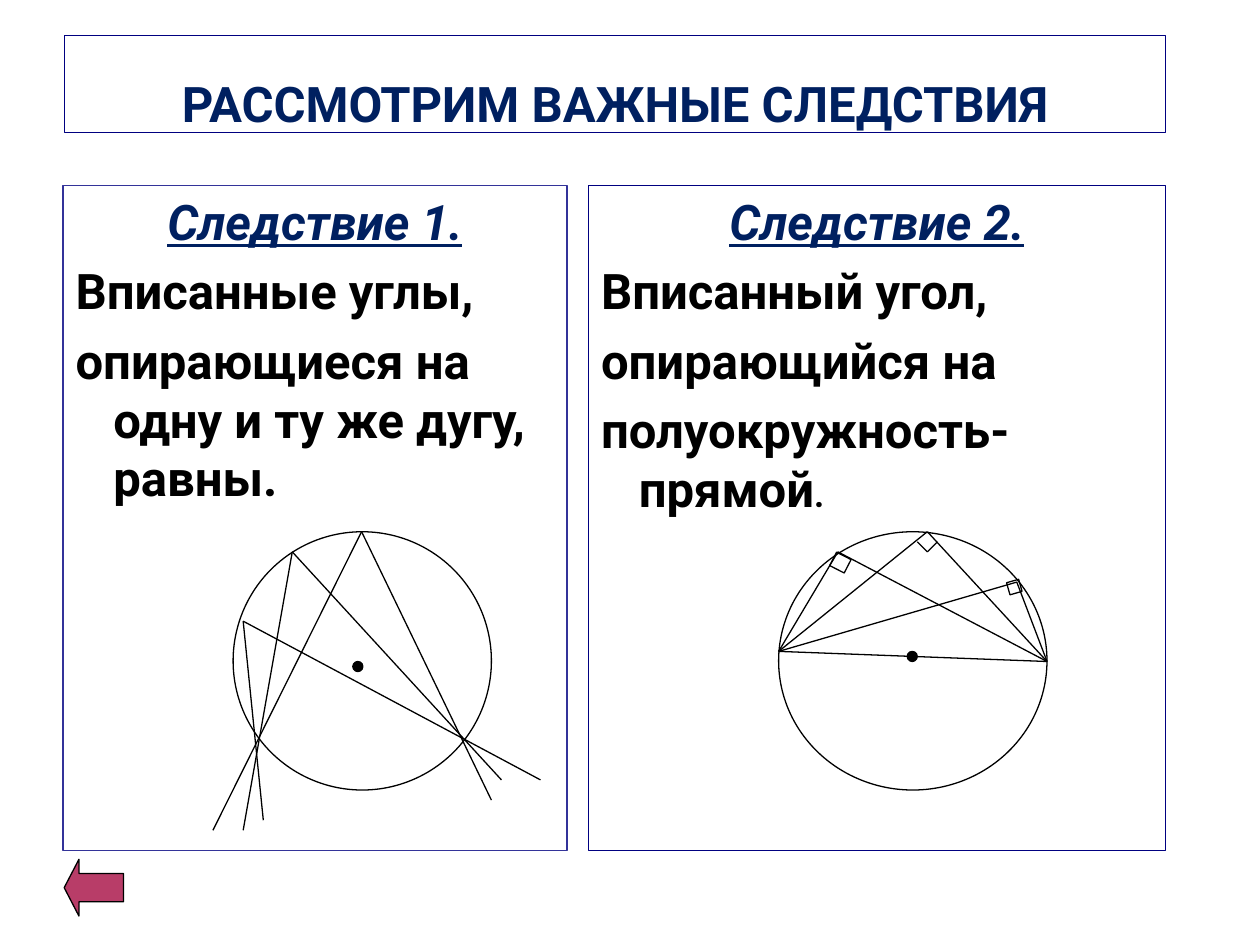
from itertools import pairwise

from lxml import etree
from pptx import Presentation
from pptx.dml.color import RGBColor
from pptx.enum.shapes import MSO_CONNECTOR, MSO_SHAPE
from pptx.enum.text import MSO_ANCHOR, MSO_AUTO_SIZE, PP_ALIGN
from pptx.oxml.ns import qn
from pptx.util import Inches, Pt

BLACK = RGBColor(0x00, 0x00, 0x00)
HEADING_BLUE = RGBColor(0x00, 0x20, 0x60)
NAVY = RGBColor(0x00, 0x00, 0x80)
INDIGO = RGBColor(0x33, 0x33, 0x99)
CRIMSON = RGBColor(0xB8, 0x3D, 0x68)

CENTER, LEFT = PP_ALIGN.CENTER, PP_ALIGN.LEFT
TOP, BOTTOM = MSO_ANCHOR.TOP, MSO_ANCHOR.BOTTOM
NO_AUTOFIT = MSO_AUTO_SIZE.NONE
STRAIGHT = MSO_CONNECTOR.STRAIGHT
OVAL, RECTANGLE, LEFT_ARROW = MSO_SHAPE.OVAL, MSO_SHAPE.RECTANGLE, MSO_SHAPE.LEFT_ARROW


class GeometrySlide:
    font_name = "Roboto"
    text_size = 28
    line_width = Pt(0.75)
    hanging = Inches(0.3)
    dot_size = 0.08

    def __init__(self, slide):
        self.slide = slide

    def outline(self, item, color=BLACK):
        item.line.color.rgb = color
        item.line.width = self.line_width

    def frame(self, placeholder, box, border, anchor):
        placeholder.left, placeholder.top, placeholder.width, placeholder.height = map(Inches, box)
        self.outline(placeholder, border)
        text_frame = placeholder.text_frame
        text_frame.word_wrap = True
        text_frame.auto_size = NO_AUTOFIT
        text_frame.vertical_anchor = anchor
        return text_frame

    def run(self, paragraph, text, color=BLACK, size=text_size, emphasis=False):
        run = paragraph.add_run()
        run.text = text
        font = run.font
        font.name = self.font_name
        font.size = Pt(size)
        font.bold = True
        font.italic = font.underline = emphasis
        font.color.rgb = color

    def title(self, text, box):
        text_frame = self.frame(self.slide.shapes.title, box, NAVY, BOTTOM)
        text_frame.margin_left = text_frame.margin_right = Inches(0.05)
        text_frame.margin_top = text_frame.margin_bottom = 0
        paragraph = text_frame.paragraphs[0]
        paragraph.alignment = CENTER
        self.run(paragraph, text, HEADING_BLUE)

    def corollary(self, index, box, border, heading, statements):
        text_frame = self.frame(self.slide.placeholders[index], box, border, TOP)
        paragraph = text_frame.paragraphs[0]
        self.indent(paragraph, CENTER, 0)
        self.run(paragraph, heading, HEADING_BLUE, emphasis=True)
        for statement in statements:
            paragraph = text_frame.add_paragraph()
            self.indent(paragraph, LEFT, 6)
            self.run(paragraph, statement)
        return paragraph

    def indent(self, paragraph, alignment, space_before):
        properties = paragraph._p.get_or_add_pPr()
        properties.set("marL", str(self.hanging))
        properties.set("indent", str(-self.hanging))
        etree.SubElement(properties, qn("a:buNone"))
        paragraph.alignment = alignment
        paragraph.space_before = Pt(space_before)

    def shape(self, kind, box, fill=None, rotation=0):
        shape = self.slide.shapes.add_shape(kind, *map(Inches, box))
        shape.shadow.inherit = False
        if fill is None:
            shape.fill.background()
        else:
            shape.fill.solid()
            shape.fill.fore_color.rgb = fill
        self.outline(shape)
        shape.rotation = rotation
        return shape

    def dot(self, left, top):
        self.shape(OVAL, (left, top, self.dot_size, self.dot_size), BLACK)

    def path_through(self, *points):
        for start, end in pairwise(points):
            line = self.slide.shapes.add_connector(STRAIGHT, *map(Inches, start + end))
            self.outline(line)
            etree.SubElement(line._element.spPr, qn("a:effectLst"))


def main():
    presentation = Presentation()
    presentation.slide_width, presentation.slide_height = Inches(10), Inches(7.5)
    page = GeometrySlide(presentation.slides.add_slide(presentation.slide_layouts[3]))

    page.title("РАССМОТРИМ ВАЖНЫЕ СЛЕДСТВИЯ", (0.51, 0.28, 8.74, 0.77))
    page.corollary(1, (0.5, 1.47, 4, 5.28), INDIGO, "Следствие 1.",
                   ["Вписанные углы,", "опирающиеся на одну и ту же дугу, равны."])
    conclusion = page.corollary(2, (4.67, 1.47, 4.58, 5.28), NAVY, "Следствие 2.",
                                ["Вписанный угол,", "опирающийся на", "полуокружность- прямой"])
    page.run(conclusion, ".", size=20)

    page.shape(OVAL, (1.85, 4.22, 2.05, 2.05))
    for left_end, vertex, right_end in [
        ((1.93, 6.59), (2.32, 4.38), (3.98, 6.19)),
        ((1.69, 6.59), (2.87, 4.22), (3.9, 6.35)),
        ((2.09, 6.51), (1.93, 4.93), (4.29, 6.19)),
    ]:
        page.path_through(left_end, vertex, right_end)
    page.dot(2.8, 5.25)

    page.shape(OVAL, (6.18, 4.22, 2.13, 2.05))
    diameter_start, diameter_end = (6.18, 5.17), (8.31, 5.25)
    page.path_through(diameter_start, diameter_end)
    for vertex in [(7.36, 4.22), (6.65, 4.38), (8.07, 4.62)]:
        page.path_through(diameter_start, vertex, diameter_end)
    page.dot(7.2, 5.17)

    page.shape(RECTANGLE, (6.61, 4.4, 0.12, 0.13), rotation=297.2)
    page.path_through((7.28, 4.3), (7.36, 4.38), (7.44, 4.3))
    page.shape(RECTANGLE, (8, 4.61, 0.1, 0.1), rotation=74.1)

    back_arrow = page.shape(LEFT_ARROW, (0.51, 6.82, 0.47, 0.45), CRIMSON)
    back_arrow.adjustments[1] = 0.26

    presentation.save("out.pptx")


if __name__ == "__main__":
    main()
